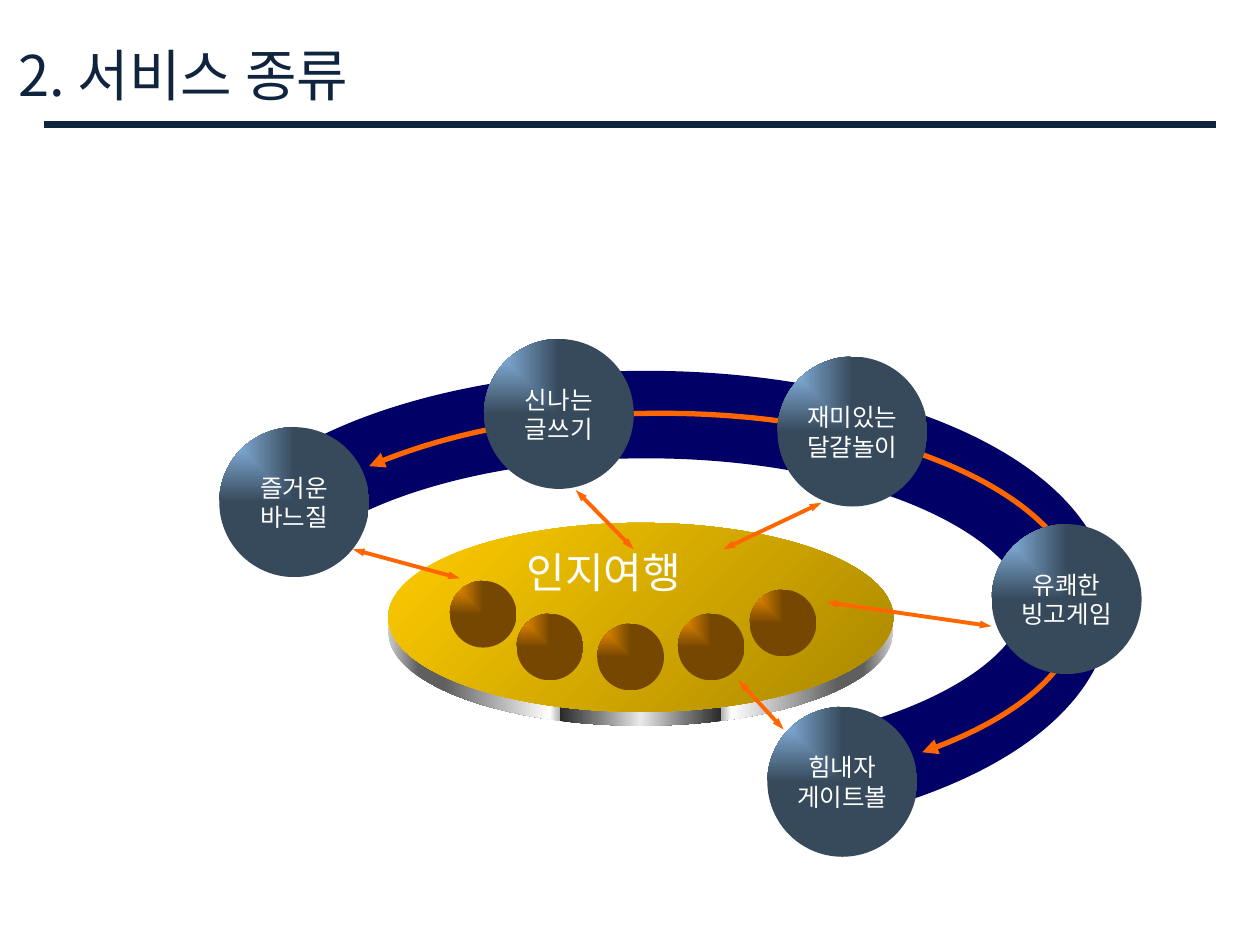
from lxml import etree
from pptx import Presentation
from pptx.dml.color import RGBColor
from pptx.enum import shapes, text
from pptx.oxml import ns
from pptx.util import Inches, Pt

# Content
TITLE = "2. 서비스 종류"
HUB = "인지여행"
LOW = [("힘내자\n게이트볼", 6.09, 5.61), ("즐거운\n바느질", 1.74, 3.39)]
HIGH = [("신나는\n글쓰기", 3.84, 2.69), ("재미있는\n달걀놀이", 6.17, 2.83),
        ("유쾌한\n빙고게임", 7.87, 4.16)]
DOTS = [(3.57, 4.61), (4.1, 4.87), (4.74, 4.95), (5.38, 4.87), (5.95, 4.68)]
LINKS = [(2.8, 4.36, 3.65, 4.59), (4.57, 3.89, 5.03, 4.36),
         (6.52, 3.99, 5.74, 4.36), (6.56, 4.78, 7.87, 4.97),
         (5.86, 5.4, 6.22, 5.79)]
# Bezier chains: start, then three points for each curve
BAND = [(2.34, 3.98), (2.95, 3.55), (4, 3.29), (5.13, 3.29), (6.97, 3.29),
        (8.47, 3.97), (8.47, 4.8), (8.47, 5.42), (7.63, 5.98), (6.36, 6.21)]
FLOW = [(2.93, 3.7), (3.56, 3.43), (4.38, 3.28), (5.25, 3.28), (7.09, 3.28),
        (8.58, 3.96), (8.58, 4.79), (8.58, 5.25), (8.12, 5.69), (7.32, 5.97)]

FONT = "Noto Sans CJK KR"
INK = {"title": "0F243E", "band": "000066", "flow": "FF6600", "white": "FFFFFF"}
BLUE = [(0, "99CCFF"), (100, "374A5C")]
BROWN = [(0, "FF9900"), (100, "764700")]
GOLD = [(0, "FFCC00"), (100, "A98700")]
STEEL = [(0, "CBCBCB"), (6, "5F5F5F"), (11, "5F5F5F"), (32, "FFFFFF"),
         (34, "B2B2B2"), (34, "292929"), (41, "777777"), (50, "EAEAEA"),
         (59, "777777"), (66, "292929"), (66, "B2B2B2"), (68, "FFFFFF"),
         (89, "5F5F5F"), (94, "5F5F5F"), (100, "CBCBCB")]

deck = Presentation()
deck.slide_width, deck.slide_height = Inches(10), Inches(7.5)
slide = deck.slides.add_slide(deck.slide_layouts[6])
parts = slide.shapes


def rgb(name):
    return RGBColor.from_string(INK[name])


def add(node, tag, **attrs):
    return etree.SubElement(node, ns.qn(tag), attrs)


def blend(shape, stops, angle=None):
    """Gradient fill: linear at an angle, or spreading from the top left."""
    shape.fill.background()
    props = shape._element.spPr
    grad = etree.Element(ns.qn("a:gradFill"), rotWithShape="1")
    props.replace(props.find(ns.qn("a:noFill")), grad)
    items = add(grad, "a:gsLst")
    for at, color in stops:
        add(add(items, "a:gs", pos=str(at * 1000)), "a:srgbClr", val=color)
    if angle is None:
        add(add(grad, "a:path", path="rect"), "a:fillToRect",
            r="100000", b="100000")
    else:
        add(grad, "a:lin", ang=str(angle * 60000), scaled="1")


def oval(x, y, w, h, stops, angle=None):
    shape = parts.add_shape(shapes.MSO_SHAPE.OVAL,
                            Inches(x), Inches(y), Inches(w), Inches(h))
    shape.shadow.inherit = False
    shape.line.fill.background()
    blend(shape, stops, angle)
    return shape


def style(par, size, color):
    font = par.font
    font.size, font.name = Pt(size), FONT
    font.color.rgb = rgb(color)
    add(font._element, "a:ea", typeface=FONT)
    par.line_spacing = Pt(size * 1.2)


def ball(label, x, y):
    frame = oval(x, y, 1.19, 1.19, BLUE).text_frame
    frame.text = label
    frame.word_wrap = False
    frame.vertical_anchor = text.MSO_ANCHOR.MIDDLE
    for par in frame.paragraphs:
        par.alignment = text.PP_ALIGN.CENTER
        style(par, 14, "white")


def label(words, x, y, w, h, size, color):
    frame = parts.add_textbox(Inches(x), Inches(y), Inches(w), Inches(h)).text_frame
    frame.word_wrap = False
    frame.text = words
    style(frame.paragraphs[0], size, color)


def stroke(shape, color, width, ends=None):
    shape.line.color.rgb = rgb(color)
    shape.line.width = Pt(width)
    if ends:
        for tag in ("a:headEnd", "a:tailEnd"):
            add(shape.line._get_or_add_ln(), tag, type="triangle", w=ends, len="med")


def line(x1, y1, x2, y2, color, width, ends=None):
    link = parts.add_connector(shapes.MSO_CONNECTOR.STRAIGHT,
                               Inches(x1), Inches(y1), Inches(x2), Inches(y2))
    stroke(link, color, width, ends)
    add(link._element.spPr, "a:effectLst")


def curve(chain, color, width, ends=None):
    """Open outline whose segments, three by three, become Bezier curves."""
    start, *rest = [(round(x * 100), round(y * 100)) for x, y in chain]
    pen = parts.build_freeform(*start, scale=Inches(0.01))
    pen.add_line_segments(rest, close=False)
    shape = pen.convert_to_shape()
    legs = list(shape._element.iter(ns.qn("a:lnTo")))
    track = legs[0].getparent()
    for i in range(0, len(legs), 3):
        bend = add(track, "a:cubicBezTo")
        for leg in legs[i:i + 3]:
            bend.append(leg[0])
            track.remove(leg)
    shape.shadow.inherit = False
    shape.fill.background()
    stroke(shape, color, width, ends)


# Disc: steel rim under a gold top
oval(3.08, 4.26, 4.01, 1.5, STEEL, 0)
oval(3.08, 4.15, 4.01, 1.5, GOLD, 45)

# Band and the balls under the flow line
curve(BAND, "band", 50)
for item in LOW:
    ball(*item)

# Dots on the disc, with links to the balls
for x, y in DOTS:
    oval(x, y, 0.53, 0.53, BROWN)
for ends in LINKS:
    line(*ends, "flow", 2.25, "sm")
label(HUB, 4.08, 4.29, 1.66, 0.5, 24, "white")

# Flow line and the balls above it
curve(FLOW, "flow", 3, "med")
for item in HIGH:
    ball(*item)

# Title and rule
label(TITLE, 0.05, 0.27, 3.1, 0.64, 32, "title")
line(0.35, 0.99, 9.65, 0.99, "title", 4)

deck.save("out.pptx")
